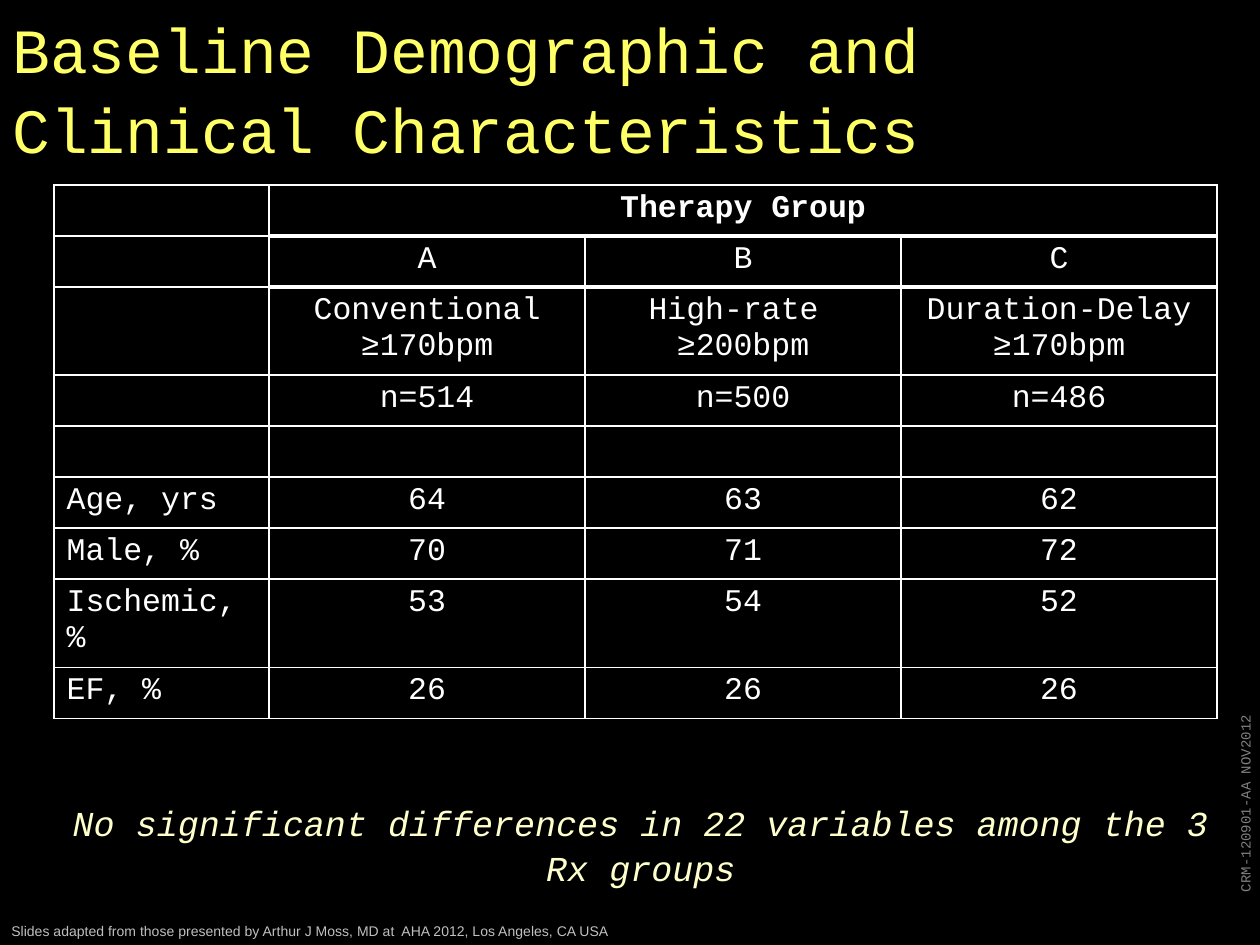
from pptx import Presentation
from pptx.dml.color import RGBColor
from pptx.enum.text import MSO_ANCHOR as Anchor, PP_ALIGN as Align
from pptx.oxml import parse_xml
from pptx.oxml.ns import nsdecls
from pptx.util import Pt

PX = 914400 // 126
BLACK = RGBColor(0x00, 0x00, 0x00)
WHITE = RGBColor(0xFF, 0xFF, 0xFF)
YELLOW = RGBColor(0xFF, 0xFF, 0x66)
CREAM = RGBColor(0xFF, 0xFF, 0xCC)
GREY = RGBColor(0x80, 0x80, 0x80)
SILVER = RGBColor(0xC0, 0xC0, 0xC0)
MONO = "Courier New"

COLS = [215, 316, 316, 316]
ROW = 51
ROWS = [
    ["", "Therapy Group", "", ""],
    ["", "A", "B", "C"],
    ["", "Conventional ≥170bpm", "High-rate \v≥200bpm", "Duration-Delay ≥170bpm"],
    ["", "n=514", "n=500", "n=486"],
    ["", "", "", ""],
    ["Age, yrs", "64", "63", "62"],
    ["Male, %", "70", "71", "72"],
    ["Ischemic, %", "53", "54", "52"],
    ["EF, %", "26", "26", "26"],
]
RULES = {0: 2, 3: 1, 4: 1}  # row: width in points of the line below it


def style(para, color, align=Align.LEFT, **font):
    para.alignment = align
    para.font.color.rgb = color
    for key, val in font.items():
        setattr(para.font, key, val)


def add_text(slide, text, box, color, turn=0, wrap=True, gap=0, lead=1.0, **form):
    shape = slide.shapes.add_textbox(*(n * PX for n in box))
    shape.rotation = turn
    frame = shape.text_frame
    frame.word_wrap = wrap
    frame.vertical_anchor = Anchor.TOP
    para = frame.paragraphs[0]
    para.text = text
    para.space_before = Pt(gap)
    para.line_spacing = lead
    style(para, color, **form)


def add_rule(cell, side, width):
    """Draw a white line on one side (T or B) of a table cell."""
    line = parse_xml(
        f'<a:ln{side} {nsdecls("a")} w="{Pt(width)}"><a:solidFill>'
        f'<a:srgbClr val="{WHITE}"/></a:solidFill></a:ln{side}>')
    cell._tc.get_or_add_tcPr().insert(0, line)


def add_grid(slide, left, top):
    frame = slide.shapes.add_table(len(ROWS), len(COLS), left * PX, top * PX,
                                   sum(COLS) * PX, len(ROWS) * ROW * PX)
    table = frame.table
    table.first_row = table.horz_banding = False
    for col, width in zip(table.columns, COLS):
        col.width = width * PX
    for r, texts in enumerate(ROWS):
        table.rows[r].height = ROW * PX
        for c, text in enumerate(texts):
            cell = table.cell(r, c)
            cell.fill.solid()
            cell.fill.fore_color.rgb = BLACK
            para = cell.text_frame.paragraphs[0]
            para.text = text
            style(para, WHITE, Align.CENTER if c else Align.LEFT,
                  name=MONO, size=Pt(18), bold=r == 0)
            # Lines belong to the data columns only
            if c and r in RULES:
                add_rule(cell, "B", RULES[r])
            if c and r - 1 in RULES:
                add_rule(cell, "T", RULES[r - 1])
    table.cell(0, 1).merge(table.cell(0, 3))


def main():
    deck = Presentation()
    deck.slide_width, deck.slide_height = 1260 * PX, 945 * PX
    slide = deck.slides.add_slide(deck.slide_layouts[6])
    slide.background.fill.solid()
    slide.background.fill.fore_color.rgb = BLACK

    # Side code and source line
    add_text(slide, "CRM-120901-AA NOV2012", (1138, 795, 215, 30), GREY, turn=270,
             wrap=False, align=Align.RIGHT, name=MONO, size=Pt(8))
    add_text(slide, "Slides adapted from those presented by Arthur J Moss, MD at  "
             "AHA 2012, Los Angeles, CA USA", (-1, 916, 1236, 30), SILVER,
             gap=1.6, name="Arial", size=Pt(8))

    # Title, table and conclusion
    add_text(slide, "Baseline Demographic and Clinical Characteristics",
             (0, 0, 1250, 165), YELLOW, lead=1.06, name=MONO, size=Pt(36))
    add_grid(slide, 54, 185)
    add_text(slide, "No significant differences in 22 variables among the 3 Rx groups",
             (53, 793, 1176, 55), CREAM, lead=1.06, align=Align.CENTER,
             name=MONO, size=Pt(20), italic=True)

    deck.save("out.pptx")


if __name__ == "__main__":
    main()
